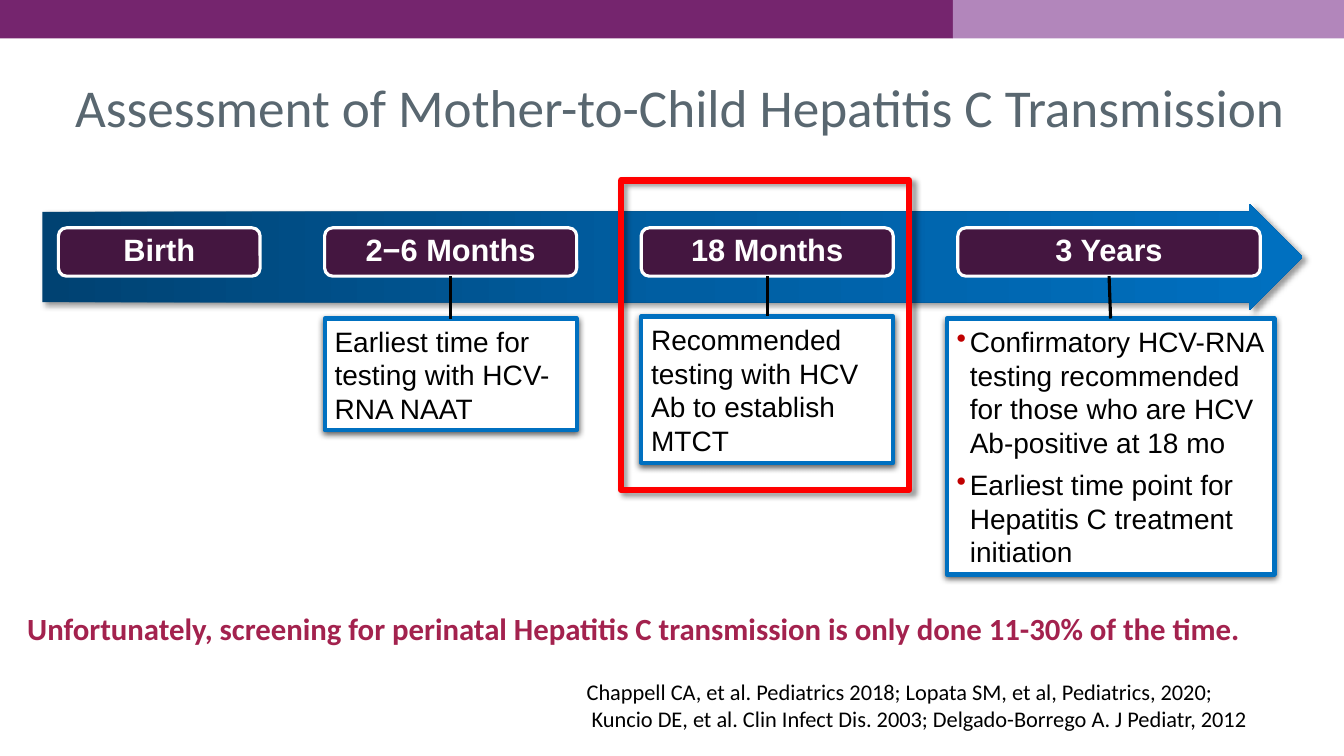
from copy import deepcopy

from lxml import etree
from pptx import Presentation
from pptx import util as u
from pptx.dml.color import RGBColor
from pptx.enum import shapes, text
from pptx.oxml.ns import qn

PX = 9144  # EMU per px, 100 px to the inch
RECT = shapes.MSO_SHAPE.RECTANGLE
ROUND = shapes.MSO_SHAPE.ROUNDED_RECTANGLE
ARROW = shapes.MSO_SHAPE.RIGHT_ARROW
TOP, MIDDLE, BOTTOM = text.MSO_ANCHOR.TOP, text.MSO_ANCHOR.MIDDLE, text.MSO_ANCHOR.BOTTOM
LEFT, CENTER = text.PP_ALIGN.LEFT, text.PP_ALIGN.CENTER

C = {
    "purple": "75256E", "lilac": "B286BB", "plum": "441640", "slate": "596770",
    "crimson": "A3224E", "navy": "004272", "mid": "005EA2", "blue": "0070C0",
    "red": "FF0000", "bullet": "C00000", "white": "FFFFFF", "black": "000000",
}
C = {name: RGBColor.from_string(value) for name, value in C.items()}

# opacity %, blur pt, distance pt, angle in degrees
SOFT = (40, 4, 3, 45)
DROP = (63, 4.5, 1.5, 90)

prs = Presentation()
prs.slide_width, prs.slide_height = 1333 * PX, 750 * PX
s = prs.slides.add_slide(prs.slide_layouts[6])


def add_block(kind, box, fill=None, line=None, width=0, shadow=None):
    sp = s.shapes.add_shape(kind, *[v * PX for v in box])
    sp.shadow.inherit = False
    for part, color in ((sp.fill, fill), (sp.line.fill, line)):
        if color:
            part.solid()
            part.fore_color.rgb = C[color]
        else:
            part.background()
    if line:
        sp.line.width = u.Pt(width)
    if shadow:
        alpha, blur, dist, angle = shadow
        effects = sp._element.spPr.find(qn("a:effectLst"))
        outer = etree.SubElement(effects, qn("a:outerShdw"), blurRad=str(u.Pt(blur)),
                                 dist=str(u.Pt(dist)), dir=str(angle * 60000),
                                 algn="ctr", rotWithShape="0")
        color = etree.SubElement(outer, qn("a:srgbClr"), val=str(C["black"]))
        etree.SubElement(color, qn("a:alpha"), val=str(alpha * 1000))
    return sp


def write(sp, lines, font, size, color, bold=False, anchor=TOP, margins=(10, 5, 10, 5),
          bullets=False, **para):
    tf = sp.text_frame
    sides = ("margin_left", "margin_top", "margin_right", "margin_bottom")
    frame = dict(zip(sides, [m * PX for m in margins]), word_wrap=True, vertical_anchor=anchor)
    for key, value in frame.items():
        setattr(tf, key, value)
    for i, line in enumerate(lines):
        p = tf.add_paragraph() if i else tf.paragraphs[0]
        for key, value in {"alignment": LEFT, **para}.items():
            setattr(p, key, value)
        r = p.add_run()
        r.text = line
        for key, value in {"name": font, "size": u.Pt(size), "bold": bold}.items():
            setattr(r.font, key, value)
        r.font.color.rgb = C[color]
        if bullets:
            pPr = p._p.get_or_add_pPr()
            pPr.set("marL", str(13 * PX))
            pPr.set("indent", str(-13 * PX))
            tint = etree.SubElement(pPr, qn("a:buClr"))
            etree.SubElement(tint, qn("a:srgbClr"), val=str(C["bullet"]))
            etree.SubElement(pPr, qn("a:buChar"), char="•")


# Top band
add_block(RECT, (0, 0, 945, 38), "purple")
add_block(RECT, (945, 0, 388, 38), "lilac")

# Title, key message and references
flush = (0, 0, 0, 0)
texts = [
    ((42, 43, 1265, 95), ["Assessment of Mother-to-Child Hepatitis C Transmission"],
     dict(size=38, color="slate", anchor=BOTTOM, margins=flush, alignment=CENTER,
          line_spacing=0.9)),
    ((27, 609, 1279, 44),
     ["Unfortunately, screening for perinatal Hepatitis C transmission is only done "
      "11-30% of the time."],
     dict(size=22, color="crimson", bold=True, margins=flush, line_spacing=0.9,
          space_before=u.Pt(10))),
    ((572, 668, 700, 64),
     ["Chappell CA, et al. Pediatrics 2018; Lopata SM, et al, Pediatrics, 2020;",
      " Kuncio DE, et al. Clin Infect Dis. 2003; Delgado-Borrego A. J Pediatr, 2012"],
     dict(size=16, color="black")),
]
for box, lines, fmt in texts:
    write(s.shapes.add_textbox(*[v * PX for v in box]), lines, "Calibri", **fmt)

# Timeline arrow with a three-stop gradient
arrow = add_block(ARROW, (42, 202, 1250, 106), "blue", shadow=SOFT)
arrow.adjustments[0], arrow.adjustments[1] = 0.845, 0.5
arrow.fill.gradient()
arrow.fill.gradient_angle = 0
stops = arrow._element.spPr.find(".//" + qn("a:gsLst"))
stops.insert(1, deepcopy(stops[0]))
for stop, position, color in zip(arrow.fill.gradient_stops, (0, 0.5, 1),
                                 ("navy", "mid", "blue")):
    stop.position = position
    stop.color.rgb = C[color]

# Frame around the 18-month step
add_block(RECT, (616, 179, 286, 307), line="red", width=4.5, shadow=SOFT)

# Steps: label, left, width, note box, note paragraphs
steps = [
    ("Birth", 58, 200, None, []),
    ("2−6 Months", 322, 250, (322, 316, 250, 111),
     ["Earliest time for testing with HCV-RNA NAAT"]),
    ("18 Months", 636, 250, (636, 314, 250, 145),
     ["Recommended testing with HCV Ab to establish MTCT"]),
    ("3 Years", 950, 300, (939, 316, 325, 254),
     ["Confirmatory HCV-RNA testing recommended for those who are HCV Ab-positive at 18 mo",
      "Earliest time point for Hepatitis C treatment initiation"]),
]
for name, left, width, note_box, notes in steps:
    label = add_block(ROUND, (left, 226, width, 48), "plum", "white", 2.25)
    write(label, [name], "Arial", 22, "white", bold=True, anchor=MIDDLE,
          alignment=CENTER, line_spacing=0.9)
    if not notes:
        continue
    note = add_block(RECT, note_box, "white", "blue", 3, DROP)
    write(note, notes, "Arial", 20, "black", anchor=MIDDLE, margins=(10, 5, 6, 5),
          bullets=len(notes) > 1, space_before=u.Pt(6))
    link = s.shapes.add_connector(shapes.MSO_CONNECTOR.STRAIGHT, 0, 0, 0, 0)
    link.begin_connect(label, 2)
    link.end_connect(note, 0)
    link.line.color.rgb = C["black"]
    link.line.width = u.Pt(2.25)
    etree.SubElement(link._element.spPr, qn("a:effectLst"))

prs.save("out.pptx")
